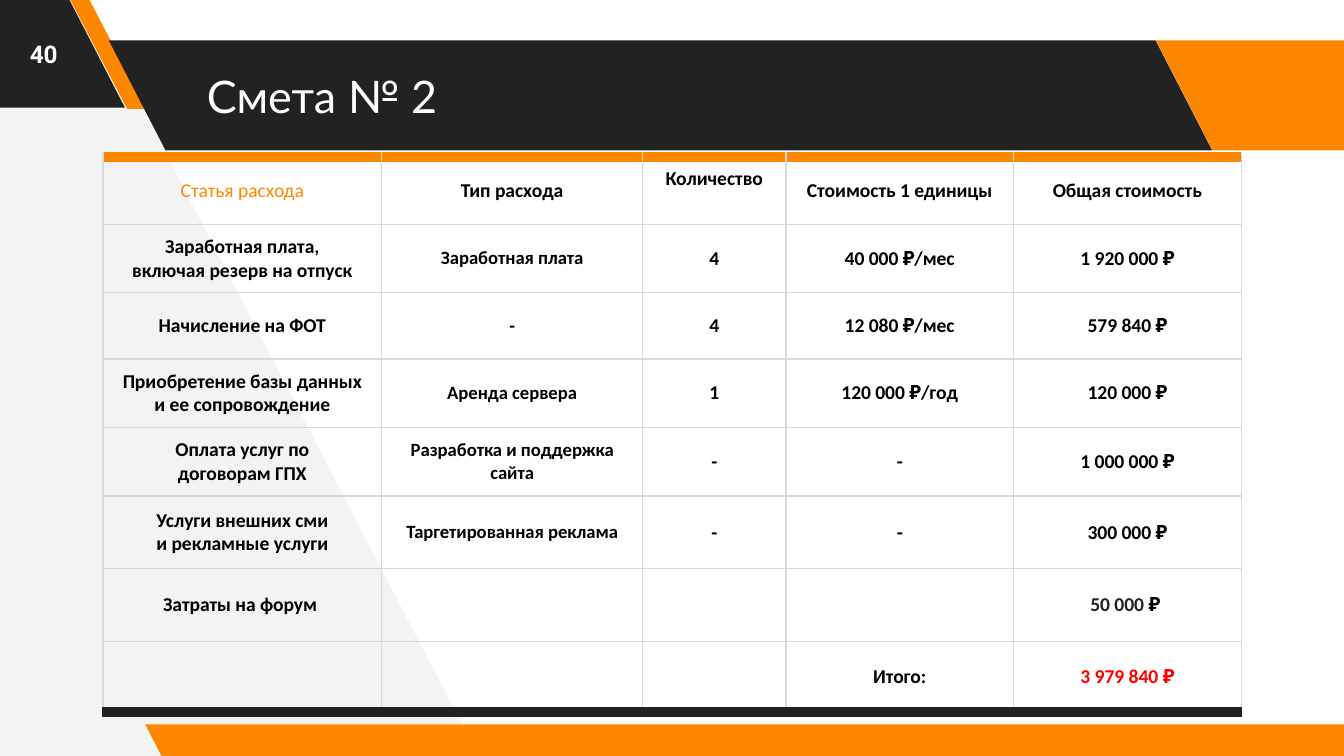
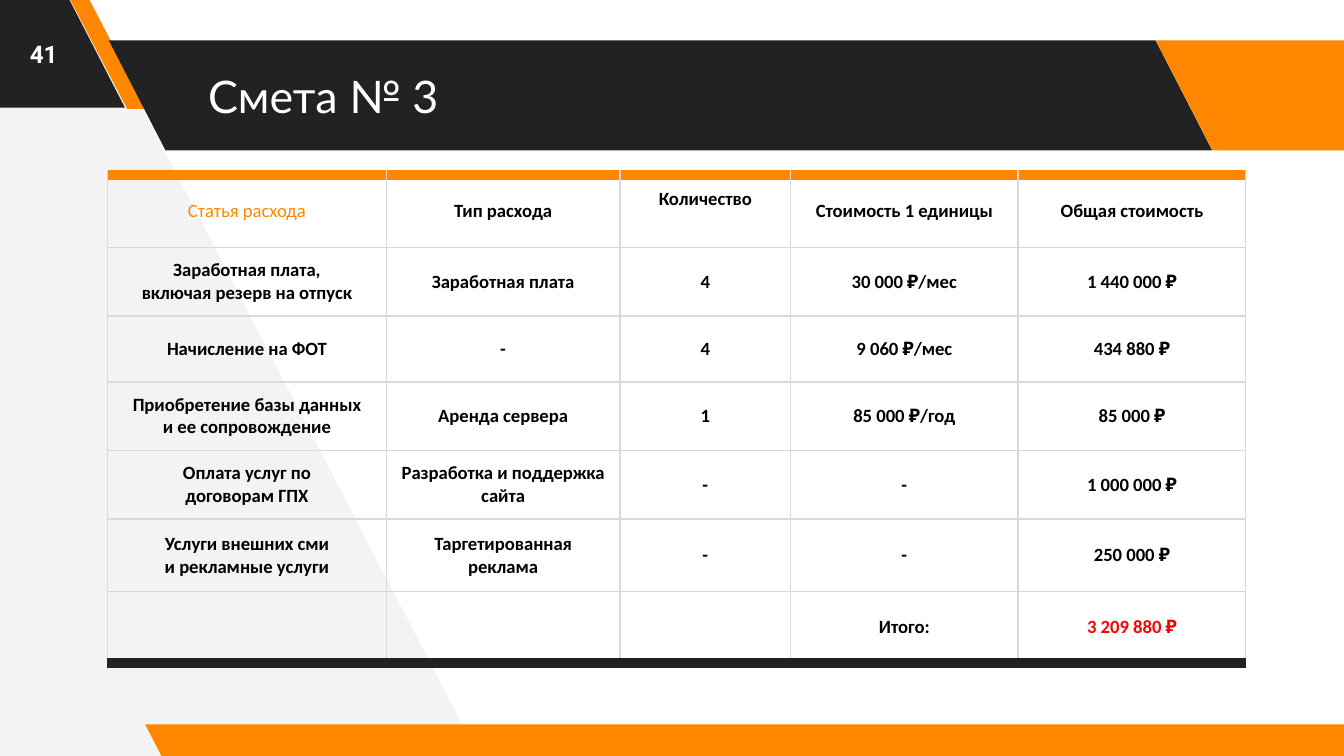
"""Builds two budget slides that share one slanted frame and one table design."""
import lxml.etree
import pptx
import pptx.dml.color
import pptx.enum.shapes
import pptx.enum.text
import pptx.oxml.ns
import pptx.util

Pt = pptx.util.Pt
RGB = pptx.dml.color.RGBColor.from_string
CENTER = pptx.enum.text.PP_ALIGN.CENTER
MIDDLE = pptx.enum.text.MSO_ANCHOR.MIDDLE


class Theme:
    orange, dark, pale, grid = "FF8700", "222222", "F3F3F3", "D9D9D9"
    black, white, red = "000000", "FFFFFF", "FF0000"
    title_font, number_font, table_font = "Lato", "Roboto", "Calibri"
    title_size, number_size = 24, 13
    hairline, edge = 0.75, 6


# "~" marks a non-breaking space.
HEADINGS = ["Статья расхода", "Тип расхода", "Количество", "Стоимость 1~единицы", "Общая стоимость"]
EXPENSES = [
    ("Заработная плата, включая~резерв на отпуск", "Заработная плата", "4"),
    ("Начисление на ФОТ", "-", "4"),
    ("Приобретение базы данных и~ее сопровождение", "Аренда~сервера", "1"),
    ("Оплата услуг по договорам~ГПХ", "Разработка и поддержка сайта", "-"),
    ("Услуги внешних сми и~рекламные услуги", "Таргетированная реклама", "-"),
]
EXPENSE_HEIGHTS = [36.72, 35.4, 36.72, 36.72, 39]
TOTAL_HEIGHT = 38

BUDGETS = [
    {
        "number": "40", "title": "Смета № 2", "title_left": 103.7,
        "corner": (55.2, 84), "columns": [149.3, 139.8, 76.8, 122, 122],
        "size": 10.5, "heading_height": 36.2,
        "prices": [("40 000~₽/мес", "1 920 000~₽"), ("12 080~₽/мес", "579 840~₽"),
                   ("120 000~₽/год", "120 000~₽"), ("-", "1 000 000~₽"), ("-", "300 000~₽")],
        "extra": [(39, ["Затраты на форум~", "", "", "",
                        [("50 000~", Theme.dark), ("₽~", Theme.black)]])],
        "total": "3 979 840 ₽",
    },
    {
        "number": "41", "title": "Смета № 3", "title_left": 104.4,
        "corner": (57.6, 93.6), "columns": [149.3, 125.3, 91.3, 122, 122],
        "size": 10, "heading_height": 39,
        "prices": [("30 000~₽/мес", "1 440 000~₽"), ("9 060~₽/мес", "434 880~₽"),
                   ("85 000~₽/год", "85 000~₽"), ("-", "1 000 000~₽"), ("-", "250 000~₽")],
        "extra": [],
        "total": "3 209 880 ₽",
    },
]
TYPE_SIZE = 10

BACKDROP = [(256.3, 405), (44.6, -2.9), (-4.3, -2.9), (-1.4, 407.5)]
BANDS = [
    (-71.3, -1.4, 138.2, 59, 0.515, Theme.dark),
    (37.4, -0.7, 41, 59, 0.75, Theme.orange),
    (58.3, 21.6, 591.1, 59, 0.515, Theme.dark),
    (619.2, 21.6, 138.2, 59, 0.515, Theme.orange),
    (77.8, 388.1, 658.8, 18, 0.515, Theme.orange),
]


def paint(shape, color):
    shape.shadow.inherit = False
    shape.fill.solid()
    shape.fill.fore_color.rgb = RGB(color)
    shape.line.fill.background()


def add_run(paragraph, text, font, size, color, bold=False):
    run = paragraph.add_run()
    run.text = text.replace("~", chr(160))
    run.font.name, run.font.size, run.font.bold = font, Pt(size), bold
    run.font.color.rgb = RGB(color)


def add_frame(slide):
    outline = slide.shapes.build_freeform(Pt(BACKDROP[0][0]), Pt(BACKDROP[0][1]))
    outline.add_line_segments([(Pt(x), Pt(y)) for x, y in BACKDROP[1:]], close=True)
    paint(outline.convert_to_shape(), Theme.pale)
    for left, top, width, height, slant, color in BANDS:
        band = slide.shapes.add_shape(pptx.enum.shapes.MSO_SHAPE.PARALLELOGRAM,
                                      Pt(left), Pt(top), Pt(width), Pt(height))
        band.adjustments[0] = slant
        band._element.spPr.xfrm.set("flipH", "1")
        paint(band, color)


def add_label(slide, box, text, font, size, bold=False, align=None):
    frame = slide.shapes.add_textbox(*map(Pt, box)).text_frame
    frame.word_wrap = True
    frame.vertical_anchor = MIDDLE
    frame.margin_left = frame.margin_right = frame.margin_top = frame.margin_bottom = Pt(7.2)
    frame.paragraphs[0].alignment = align
    add_run(frame.paragraphs[0], text, font, size, Theme.white, bold)


def set_borders(cell, top, bottom):
    inner = (Theme.grid, Theme.hairline)
    sides = {"lnL": inner, "lnR": inner, "lnT": top or inner, "lnB": bottom or inner}
    for place, (side, (color, width)) in enumerate(sides.items()):
        line = lxml.etree.Element(pptx.oxml.ns.qn("a:" + side), w=str(Pt(width)))
        fill = lxml.etree.SubElement(line, pptx.oxml.ns.qn("a:solidFill"))
        lxml.etree.SubElement(fill, pptx.oxml.ns.qn("a:srgbClr"), val=color)
        cell._tc.get_or_add_tcPr().insert(place, line)


def fill_cell(cell, content, size, bold):
    cell.fill.background()
    cell.vertical_anchor = MIDDLE
    cell.margin_left = cell.margin_right = Pt(7.2)
    cell.margin_top = cell.margin_bottom = Pt(5)
    paragraph = cell.text_frame.paragraphs[0]
    paragraph.alignment = CENTER
    for text, color in content:
        add_run(paragraph, text, Theme.table_font, size, color, bold)


def budget_rows(budget):
    headings = [[(HEADINGS[0], Theme.orange)]] + HEADINGS[1:]
    expenses = [[*expense, *price] for expense, price in zip(EXPENSES, budget["prices"])]
    total = ["", "", "", "Итого:", [(budget["total"], Theme.red)]]
    return [(budget["heading_height"], headings), *zip(EXPENSE_HEIGHTS, expenses),
            *budget["extra"], (TOTAL_HEIGHT, total)]


def add_budget(slide, budget):
    rows, columns = budget_rows(budget), budget["columns"]
    size = (sum(columns), sum(height for height, _ in rows))
    table = slide.shapes.add_table(len(rows), len(columns),
                                   *map(Pt, budget["corner"] + size)).table
    table.first_row = table.horz_banding = False
    for column, width in zip(table.columns, columns):
        column.width = Pt(width)
    last = len(rows) - 1
    for r, (height, contents) in enumerate(rows):
        table.rows[r].height = Pt(height)
        for c, content in enumerate(contents):
            if isinstance(content, str):
                content = [(content, Theme.black)] if content else []
            cell = table.cell(r, c)
            size = TYPE_SIZE if r and c == 1 else budget["size"]
            fill_cell(cell, content, size, bold=(r, c) != (0, 0))
            set_borders(cell, (Theme.orange, Theme.edge) if r == 0 else None,
                        (Theme.dark, Theme.edge) if r == last else None)
    table.cell(0, HEADINGS.index("Количество")).margin_bottom = Pt(17.8)


def main():
    deck = pptx.Presentation()
    deck.slide_width, deck.slide_height = Pt(720), Pt(405)
    for budget in BUDGETS:
        slide = deck.slides.add_slide(deck.slide_layouts[6])
        add_frame(slide)
        add_budget(slide, budget)
        add_label(slide, (0, 0, 46.8, 57.6), budget["number"],
                  Theme.number_font, Theme.number_size, True, CENTER)
        add_label(slide, (budget["title_left"], 21.6, 529.2, 59), budget["title"],
                  Theme.title_font, Theme.title_size)
    deck.save("out.pptx")


if __name__ == "__main__":
    main()
